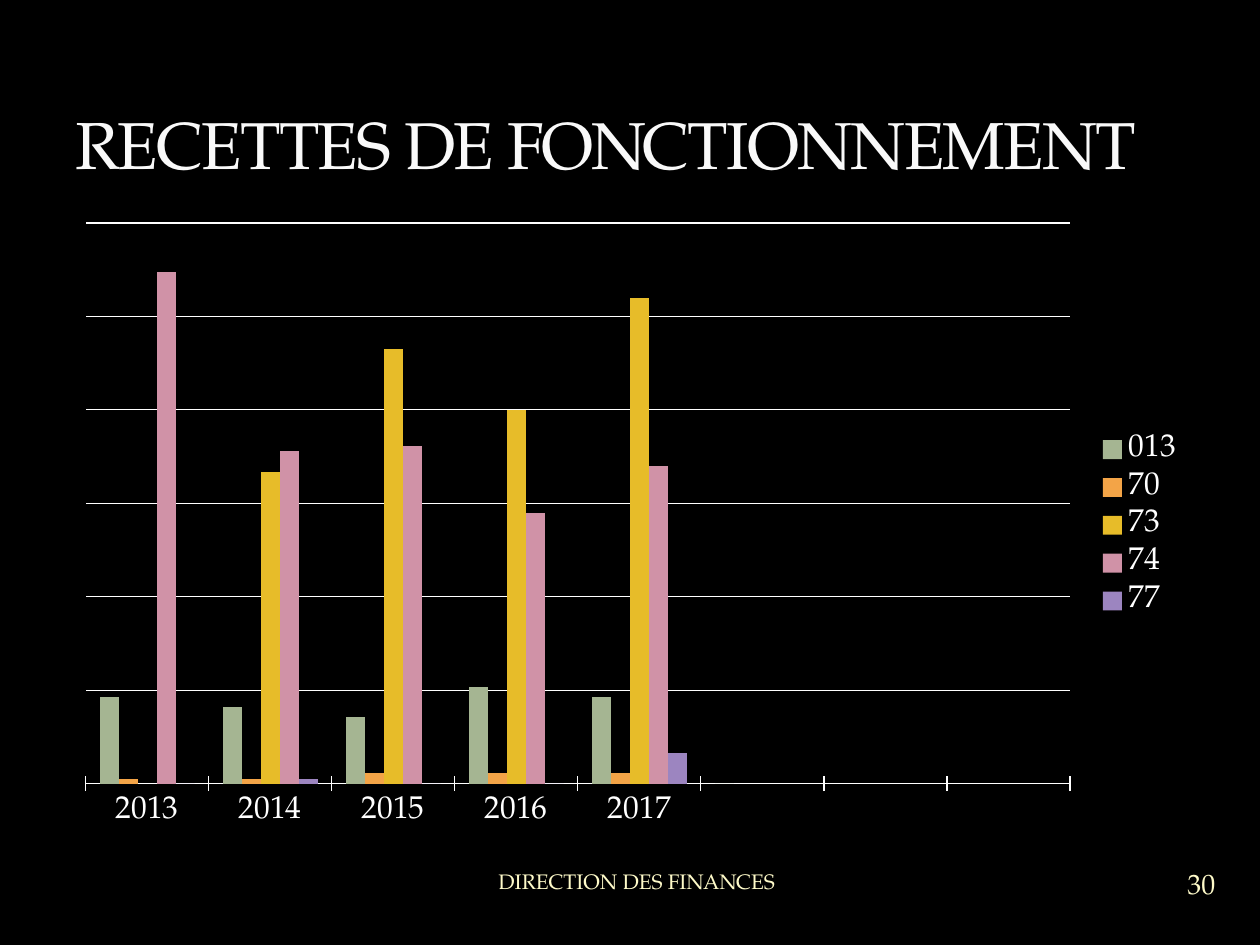
"""Build the slide on operating revenue by chapter and year."""
from dataclasses import dataclass

from lxml import etree
from pptx import Presentation
from pptx.chart.data import CategoryChartData
from pptx.dml.color import RGBColor
from pptx.enum.chart import XL_CHART_TYPE, XL_LEGEND_POSITION, XL_TICK_MARK
from pptx.enum.text import MSO_ANCHOR, PP_ALIGN
from pptx.oxml.ns import qn
from pptx.util import Cm, Pt

COLUMN = XL_CHART_TYPE.COLUMN_CLUSTERED
LEGEND = XL_LEGEND_POSITION.RIGHT
CROSS, NONE = XL_TICK_MARK.CROSS, XL_TICK_MARK.NONE
MIDDLE, BOTTOM = MSO_ANCHOR.MIDDLE, MSO_ANCHOR.BOTTOM
LEFT, CENTER, RIGHT = PP_ALIGN.LEFT, PP_ALIGN.CENTER, PP_ALIGN.RIGHT


@dataclass
class Theme:
    font: str = "TeX Gyre Pagella"
    back: str = "000000"
    ink: str = "FFFFFF"
    head: str = "F9F9F9"
    edge: str = "3C4422"
    foot: str = "FEFAC9"
    bars: tuple = ("A5B592", "F3A447", "E7BC29", "D092A7", "9C85C0")
    title: float = 37.8
    label: float = 18
    page: float = 16
    note: float = 12


YEARS = ["2013", "2014", "2015", "2016", "2017", "", "", ""]
SERIES = {
    "013": [17, 15, 13, 19, 17, 0, None, None],
    "70": [1, 1, 2, 2, 2, None, None, None],
    "73": [None, 61, 85, 73, 95, None, None, None],
    "74": [100, 65, 66, 53, 62, None, None, None],
    "77": [0, 1, 0, 0, 6, None, None, None],
}
STEP = 18.27


def paint(fill, color):
    fill.solid()
    fill.fore_color.rgb = RGBColor.from_string(color)


class Deck:
    def __init__(self, theme):
        self.theme = theme
        self.file = Presentation()
        self.file.slide_width, self.file.slide_height = Cm(25.4), Cm(19.05)
        self.slide = self.file.slides.add_slide(self.file.slide_layouts[6])
        paint(self.slide.background.fill, theme.back)

    def text(self, text, box, *, size, color, align=LEFT, anchor=MIDDLE,
             inset=True, space=None, edge=None):
        frame = self.slide.shapes.add_textbox(*map(Cm, box)).text_frame
        frame.word_wrap = True
        frame.vertical_anchor = anchor
        if not inset:
            frame.margin_left = frame.margin_right = 0
            frame.margin_top = frame.margin_bottom = 0
        para = frame.paragraphs[0]
        para.alignment = align
        run = para.add_run()
        run.text = text
        self.style(run.font, size, color)
        props = run.font._element
        if space is not None:
            props.set("spc", str(round(space * 100)))
        if edge:
            line = etree.Element(qn("a:ln"), w=str(Pt(0.25)))
            fill = etree.SubElement(line, qn("a:solidFill"))
            tint = etree.SubElement(fill, qn("a:srgbClr"), val=edge)
            etree.SubElement(tint, qn("a:alpha"), val="25000")
            props.insert(0, line)

    def style(self, font, size, color):
        font.name, font.size = self.theme.font, Pt(size)
        font.color.rgb = RGBColor.from_string(color)

    def chart(self, box, names, series, step):
        theme = self.theme
        data = CategoryChartData()
        data.categories = names
        for name, vals in series.items():
            data.add_series(name, vals)
        chart = self.slide.shapes.add_chart(COLUMN, *map(Cm, box), data).chart
        self.style(chart.font, theme.label, theme.ink)
        chart.has_title = False
        chart.has_legend = True
        chart.legend.position = LEGEND
        chart.legend.include_in_layout = False

        plot = chart.plots[0]
        plot.vary_by_categories = False
        plot.gap_width, plot.overlap = 150, 0
        for bar, color in zip(plot.series, theme.bars):
            paint(bar.format.fill, color)
            bar.invert_if_negative = False

        years, sums = chart.category_axis, chart.value_axis
        years.major_tick_mark, years.minor_tick_mark = CROSS, NONE
        sums.visible = False
        sums.has_major_gridlines = True
        sums.minimum_scale, sums.maximum_scale = 0, round(step * 6, 2)
        sums.major_unit = step
        sums.tick_labels.number_format = '#,##0.00 "€"'
        sums.tick_labels.number_format_is_linked = False
        for line in (years.format.line, sums.major_gridlines.format.line):
            paint(line.fill, theme.ink)
            line.width = Pt(0.75)


def main():
    theme = Theme()
    deck = Deck(theme)
    deck.chart((1.27, 4.24, 22.86, 12.7), YEARS, SERIES, STEP)
    deck.text("30", (23.37, 17.17, 1.7, 1.27), size=theme.page,
              color=theme.foot, align=CENTER, inset=False)
    deck.text("DIRECTION DES FINANCES", (5.92, 17.22, 9.96, 1.07),
              size=theme.note, color=theme.foot, align=RIGHT)
    deck.text("RECETTES DE FONCTIONNEMENT", (1.27, 0.43, 22.86, 3.38),
              size=theme.title, color=theme.head, anchor=BOTTOM,
              space=-1, edge=theme.edge)
    deck.file.save("out.pptx")


if __name__ == "__main__":
    main()
